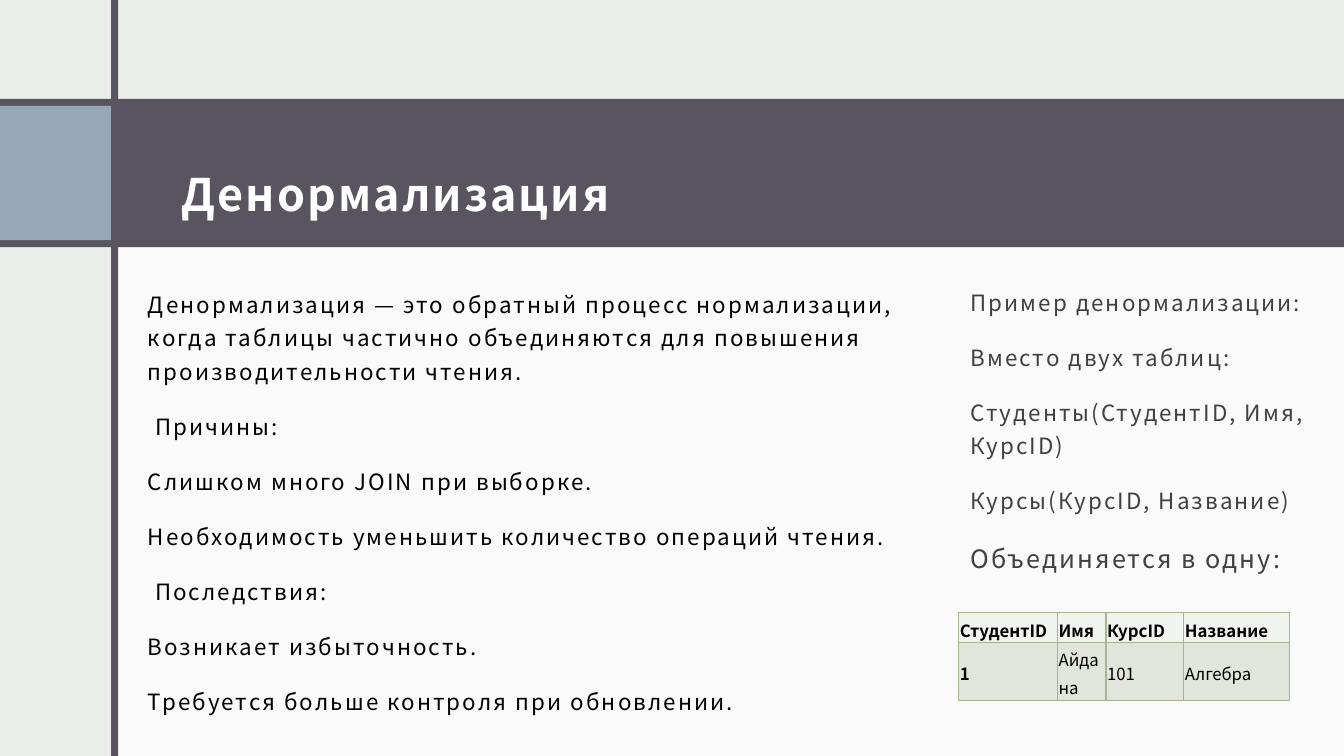
from lxml.etree import SubElement
from pptx import Presentation
from pptx.dml.color import RGBColor
from pptx.enum.shapes import MSO_SHAPE
from pptx.enum.text import MSO_ANCHOR, PP_ALIGN
from pptx.oxml import parse_xml
from pptx.oxml.ns import nsdecls, qn
from pptx.util import Cm, Pt

FONT = "Noto Sans CJK JP"
DARK, PALE, BLUE = "595460", "EBEDEB", "97A7B8"


def color(hex_string):
    return RGBColor.from_string(hex_string)


def style_paragraph(paragraph, size, hex_string, bold=False, spacing=0):
    """Format every run; spacing is letter spacing in hundredths of a point."""
    paragraph.alignment = PP_ALIGN.LEFT
    for run in paragraph.runs:
        run.font.name = FONT
        run.font.size = Pt(size)
        run.font.bold = bold
        run.font.color.rgb = color(hex_string)
        properties = run._r.get_or_add_rPr()
        properties.set("spc", str(spacing))
        for script in ("a:ea", "a:cs"):
            SubElement(properties, qn(script)).set("typeface", FONT)


deck = Presentation()
deck.slide_width, deck.slide_height = Cm(33.87), Cm(19.05)
slide = deck.slides.add_slide(deck.slide_layouts[6])
slide.background.fill.solid()
slide.background.fill.fore_color.rgb = color(PALE)

# Backdrop: content panel, title band, accent square, vertical bar
backdrop = [
    (2.9, 5.92, 30.97, 13.13, "FAFAFA"),
    (0, 2.49, 33.87, 3.74, DARK),
    (0, 2.67, 2.8, 3.38, BLUE),
    (2.8, 0, 0.18, 19.05, DARK),
]
for left, top, width, height, fill in backdrop:
    block = slide.shapes.add_shape(
        MSO_SHAPE.RECTANGLE, Cm(left), Cm(top), Cm(width), Cm(height))
    block.shadow.inherit = False
    block.fill.solid()
    block.fill.fore_color.rgb = color(fill)
    block.line.fill.background()

# Texts: position, top inset, color, bold, (line, size) pairs
title = [("Денормализация", 32)]
explanation = [(line, 16) for line in (
    "Денормализация — это обратный процесс нормализации, когда таблицы "
    "частично объединяются для повышения производительности чтения.",
    " Причины:",
    "Слишком много JOIN при выборке.",
    "Необходимость уменьшить количество операций чтения.",
    " Последствия:",
    "Возникает избыточность.",
    "Требуется больше контроля при обновлении.",
)]
example = [
    ("Пример денормализации:", 16),
    ("Вместо двух таблиц:", 16),
    ("Студенты(СтудентID, Имя, КурсID)", 16),
    ("Курсы(КурсID, Название)", 16),
    ("Объединяется в одну:", 18),
]
texts = [
    (4.27, 3.76, 27.81, 3.38, 0.11, "FFFFFF", True, title),
    (3.43, 6.86, 20.27, 10.67, 0.3, "000000", False, explanation),
    (24.16, 6.81, 9.78, 8.08, 0.3, "404040", False, example),
]
for left, top, width, height, inset, ink, bold, lines in texts:
    frame = slide.shapes.add_textbox(
        Cm(left), Cm(top), Cm(width), Cm(height)).text_frame
    frame.word_wrap = True
    frame.vertical_anchor = MSO_ANCHOR.TOP
    frame.margin_left = frame.margin_right = Cm(0.3)
    frame.margin_top, frame.margin_bottom = Cm(inset), Cm(0.25)
    frame.text = "\n".join(line for line, size in lines)
    for number, (paragraph, (line, size)) in enumerate(zip(frame.paragraphs, lines)):
        paragraph.line_spacing = 1.25
        paragraph.space_before = Pt(9.3 if number else 0)
        paragraph.space_after = Pt(6)
        style_paragraph(paragraph, size, ink, bold, 150)

# Merged table of students and courses
records = [
    ("СтудентID", "Имя", "КурсID", "Название"),
    ("1", "Айдана", "101", "Алгебра"),
]
column_widths = (2.49, 1.22, 1.96, 2.67)
row_heights = (0.75, 1.46)
row_fills = ("F0F3EE", "E1E5DC")
students = slide.shapes.add_table(
    2, 4, Cm(24.16), Cm(15.44), Cm(sum(column_widths)), Cm(sum(row_heights))).table
students.first_row = students.horz_banding = False
for column, width in zip(students.columns, column_widths):
    column.width = Cm(width)
for r, record in enumerate(records):
    students.rows[r].height = Cm(row_heights[r])
    for c, value in enumerate(record):
        cell = students.cell(r, c)
        cell.vertical_anchor = MSO_ANCHOR.MIDDLE
        cell.margin_left = cell.margin_right = Cm(0.03)
        cell.margin_top = cell.margin_bottom = Cm(0.03)
        cell.text_frame.text = value
        paragraph = cell.text_frame.paragraphs[0]
        paragraph.line_spacing = 1.15
        paragraph.space_after = Pt(8)
        style_paragraph(paragraph, 12, "000000", r == 0 or c == 0)
        for side in ("lnL", "lnR", "lnT", "lnB"):
            cell._tc.get_or_add_tcPr().append(parse_xml(
                f'<a:{side} {nsdecls("a")} w="12700"><a:solidFill>'
                f'<a:srgbClr val="A5B592"/></a:solidFill></a:{side}>'))
        cell.fill.solid()
        cell.fill.fore_color.rgb = color(row_fills[r])

deck.save("out.pptx")
